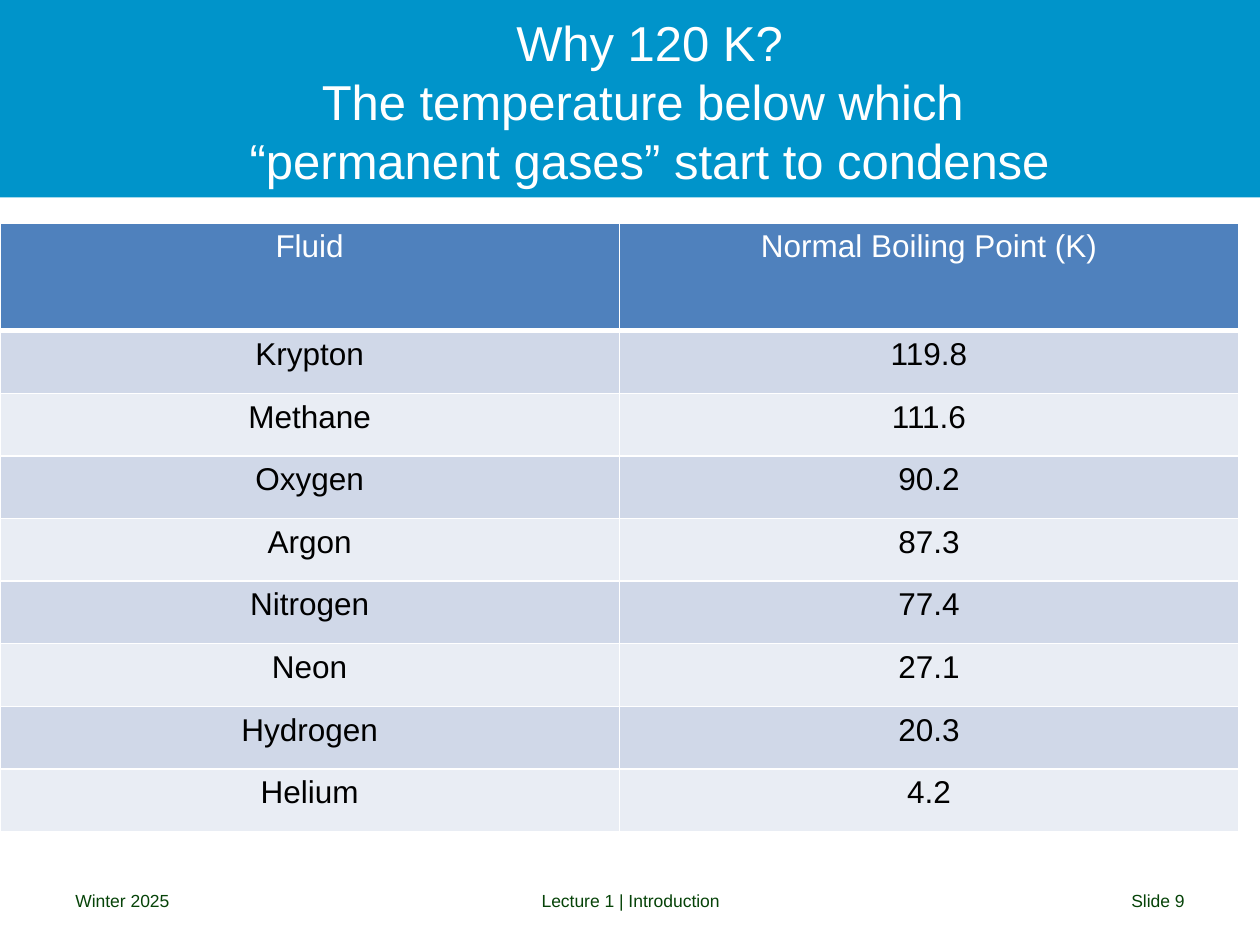
from lxml.etree import SubElement
from pptx import Presentation
from pptx.dml.color import RGBColor
from pptx.enum.shapes import MSO_SHAPE as Shape
from pptx.enum.text import MSO_ANCHOR as Anchor, PP_ALIGN as Align
from pptx.oxml.ns import qn
from pptx.util import Inches, Pt

WIDTH, HEIGHT = 10, 7.5
FONT = "Arial"
COLOURS = {
    "band": "0094CA", "white": "FFFFFF", "black": "000000", "footer": "064308",
    "header": "4F81BD", "odd": "D0D8E8", "even": "E9EDF4",
}
TITLE = "Why 120 K?\vThe temperature below which \v“permanent gases” start to condense"
BOILING_POINTS = [
    ("Fluid", "Normal Boiling Point (K)"),
    ("Krypton", "119.8"), ("Methane", "111.6"), ("Oxygen", "90.2"),
    ("Argon", "87.3"), ("Nitrogen", "77.4"), ("Neon", "27.1"),
    ("Hydrogen", "20.3"), ("Helium", "4.2"),
]
HEADER_ROWS = 1.72
FOOTERS = [
    ("Winter 2025", 0.5, 2.33, Align.LEFT),
    ("Lecture 1 | Introduction", 3.42, 3.17, Align.CENTER),
    ("Slide 9", 7.17, 2.33, Align.RIGHT),
]


def colour(name):
    """Return a named colour of the palette."""
    return RGBColor.from_string(COLOURS[name])


def style(para, size, ink, align):
    """Set the font and alignment of a paragraph."""
    para.alignment = align
    para.font.name = FONT
    para.font.size = Pt(size)
    para.font.bold = False
    para.font.color.rgb = colour(ink)


def place(shape, box):
    """Move a shape to a box given in inches."""
    shape.left, shape.top, shape.width, shape.height = map(Inches, box)


def add_heading(page, box):
    """Draw the colour band with the title centred in it."""
    left, top, width, height = box
    band = page.shapes.add_shape(Shape.RECTANGLE, *map(Inches, box))
    band.shadow.inherit = False
    band.fill.solid()
    band.fill.fore_color.rgb = colour("band")
    band.line.fill.background()
    title = page.shapes.title
    band._element.getparent().insert(2, band._element)
    place(title, (left + width * 0.125, top + height * 0.11, width * 0.781, height * 0.8))
    frame = title.text_frame
    frame.text = TITLE
    frame.word_wrap = True
    frame.vertical_anchor = Anchor.MIDDLE
    style(frame.paragraphs[0], 28, "white", Align.CENTER)


def add_borders(cell, bottom):
    """Give a cell white borders, with its own width at the bottom."""
    properties = cell._tc.get_or_add_tcPr()
    for side, width in (("L", 1), ("R", 1), ("T", 1), ("B", bottom)):
        line = SubElement(properties, qn(f"a:ln{side}"), w=str(Pt(width)))
        fill = SubElement(line, qn("a:solidFill"))
        SubElement(fill, qn("a:srgbClr"), val=COLOURS["white"])


def fill_cell(cell, text, row):
    """Write and format one cell according to its row."""
    add_borders(cell, 1 if row else 3)
    cell.fill.solid()
    cell.fill.fore_color.rgb = colour(("odd" if row % 2 else "even") if row else "header")
    cell.margin_left = cell.margin_right = Inches(0.16)
    cell.margin_top = cell.margin_bottom = Inches(0.05)
    cell.text = text
    style(cell.text_frame.paragraphs[0], 18, "black" if row else "white", Align.CENTER)


def add_boiling_points(page, box):
    """Add the table with equal columns and a taller header row."""
    count = len(BOILING_POINTS)
    table = page.shapes.add_table(count, 2, *map(Inches, box)).table
    unit = box[3] / (count - 1 + HEADER_ROWS)
    for column in table.columns:
        column.width = Inches(box[2] / 2)
    for index, texts in enumerate(BOILING_POINTS):
        table.rows[index].height = Inches(unit if index else unit * HEADER_ROWS)
        for cell, text in zip(table.rows[index].cells, texts):
            fill_cell(cell, text, index)


def add_footer(page, top, height):
    """Add the date, lecture and slide number along the bottom."""
    for text, left, width, align in FOOTERS:
        label = page.shapes.add_textbox(*map(Inches, (left, top, width, height)))
        frame = label.text_frame
        frame.word_wrap = True
        frame.vertical_anchor = Anchor.MIDDLE
        frame.text = text
        style(frame.paragraphs[0], 10, "footer", align)


def main():
    """Build the slide and save the deck."""
    deck = Presentation()
    deck.slide_width, deck.slide_height = Inches(WIDTH), Inches(HEIGHT)
    page = deck.slides.add_slide(deck.slide_layouts[5])
    add_heading(page, (0, 0, WIDTH, HEIGHT * 0.209))
    add_boiling_points(page, (0, HEIGHT * 0.236, WIDTH * 0.983, HEIGHT * 0.644))
    add_footer(page, 6.95, 0.4)
    deck.save("out.pptx")


if __name__ == "__main__":
    main()
